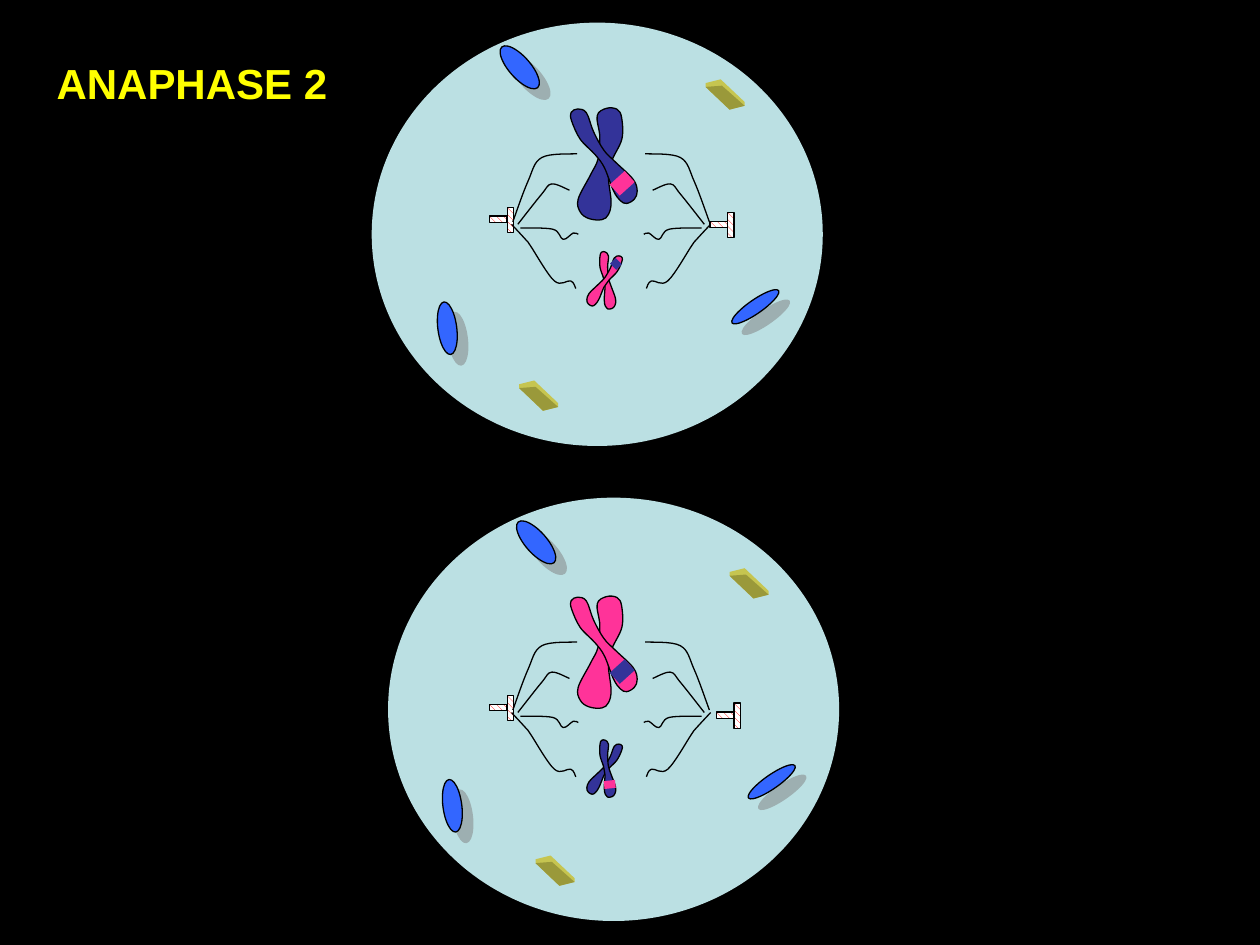
import dataclasses
import math

import lxml.etree
import pptx
import pptx.dml.color
import pptx.enum.dml
import pptx.enum.shapes
import pptx.oxml.ns
import pptx.util

RGB = pptx.dml.color.RGBColor
BLACK = RGB(0x00, 0x00, 0x00)
WHITE = RGB(0xFF, 0xFF, 0xFF)
RED = RGB(0xFF, 0x00, 0x00)
YELLOW = RGB(0xFF, 0xFF, 0x00)
CELL = RGB(0xBB, 0xE0, 0xE3)
BLUE = RGB(0x33, 0x66, 0xFF)
GREY = RGB(0x80, 0x80, 0x80)
NAVY = RGB(0x33, 0x33, 0x99)
PINK = RGB(0xFF, 0x33, 0x99)
LIGHT = RGB(0xC6, 0xC5, 0x50)
DARK = RGB(0x9A, 0x99, 0x3A)
KINDS = pptx.enum.shapes.MSO_SHAPE
COLS, ROWS = 1000, 750
AXIS = 485


@dataclasses.dataclass
class Arm:
    """One chromatid: middle, size, turn, and whether it is mirrored."""
    x: float
    y: float
    wide: float
    high: float
    turn: float
    flip: bool = False

    def place(self, across, down):
        """Turn shares of the arm's box into a spot on the grid."""
        dx = (across - 0.5) * self.wide * (-1 if self.flip else 1)
        dy = (down - 0.5) * self.high
        return swing(dx, dy, self.turn, self.x, self.y)


@dataclasses.dataclass
class Band:
    """A swapped piece: the arm, share down it, length, lean and weight."""
    arm: Arm
    down: float
    span: float
    lean: float
    weight: float


# fields: share down the arm, left edge, right edge
PROFILE = [(0.02, 0.55, 0.82), (0.09, 0.34, 0.95), (0.27, 0.45, 1.0),
           (0.46, 0.45, 0.80), (0.60, 0.30, 0.74), (0.82, 0.04, 0.86),
           (0.93, 0.12, 0.82), (0.98, 0.35, 0.67)]
BROAD = Arm(476, 130, 32, 92, 4.7)
SLIM = Arm(480, 123, 22, 88, 330.8, flip=True)
STEEP = Arm(482.5, 222.5, 11, 47, 356, flip=True)
SLOPE = Arm(479.5, 222.5, 11, 47, 29.9)
LONG = Band(SLIM, 0.8, 16, -13, 8.5)
HIGH = Band(SLOPE, 0.16, 7, 15, 4.5)
LOW = Band(STEEP, 0.77, 9, -2, 4.5)

POLE = (405, 178)
THREADS = {
    "top": [(2, -2), (14, -34), (25, -53), (53, -56)],
    "upper": [(6, 0), (25, -24), (33, -32), (47, -27)],
    "lower": [(8, 3), (34, 4), (42, 12), (50, 7), (54, 8)],
    "base": [(1, 0), (13, 13), (16, 17), (35, 45), (48, 45), (52, 51)],
}


def swing(dx, dy, turn, x=0, y=0):
    cos, sin = math.cos(math.radians(turn)), math.sin(math.radians(turn))
    return x + dx * cos - dy * sin, y + dx * sin + dy * cos


def smooth(spots, closed=False):
    """Give the Bezier points of a smooth curve through the spots."""
    count = len(spots)

    def spot(at):
        return spots[at % count if closed else min(max(at, 0), count - 1)]

    curve = [spots[0]]
    for at in range(count if closed else count - 1):
        before, start, end, after = (spot(at + step) for step in (-1, 0, 1, 2))
        curve.append(tuple(s + (e - b) / 6 for b, s, e in zip(before, start, end)))
        curve.append(tuple(e - (a - s) / 6 for s, e, a in zip(start, end, after)))
        curve.append(end)
    return curve


def write(frame, text, size=24, color=YELLOW, bold=True, font="Arial"):
    run = frame.paragraphs[0].add_run()
    run.text = text
    run.font.size, run.font.bold, run.font.name = pptx.util.Pt(size), bold, font
    run.font.color.rgb = color


class Board:
    """Draws cells on one slide over a grid of 1000 columns by 750 rows."""

    def __init__(self, deck):
        self.unit = deck.slide_width / COLS
        self.slide = deck.slides.add_slide(deck.slide_layouts[6])
        self.slide.background.fill.solid()
        self.slide.background.fill.fore_color.rgb = BLACK
        self.items = self.slide.shapes

    def size(self, *spans):
        return [round(span * self.unit) for span in spans]

    def paint(self, shape, fill, line):
        shape.shadow.inherit = False
        if fill is None:
            shape.fill.background()
        else:
            shape.fill.solid()
            shape.fill.fore_color.rgb = fill
        if line is None:
            shape.line.fill.background()
        else:
            shape.line.color.rgb = line
            shape.line.width = pptx.util.Pt(0.75)

    def form(self, kind, box, fill, line=BLACK, turn=0):
        shape = self.items.add_shape(kind, *self.size(*box))
        shape.rotation = turn
        self.paint(shape, fill, line)
        return shape

    def trace(self, spots, fill=None, line=BLACK):
        first, *rest = [self.size(*spot) for spot in spots]
        pen = self.items.build_freeform(*first)
        pen.add_line_segments(rest, close=fill is not None)
        shape = pen.convert_to_shape()
        self.paint(shape, fill, line)
        return shape

    def curve(self, spots, fill=None):
        shape = self.trace(smooth(spots, closed=fill is not None), fill)
        name = pptx.oxml.ns.qn
        steps = list(shape._element.iter(name("a:lnTo")))
        for at in range(0, len(steps), 3):
            bend = lxml.etree.SubElement(steps[at].getparent(), name("a:cubicBezTo"))
            steps[at].addprevious(bend)
            for step in steps[at:at + 3]:
                bend.append(step[0])
                step.getparent().remove(step)
        return shape

    def label(self, box, text, **form):
        frame = self.items.add_textbox(*self.size(*box)).text_frame
        frame.word_wrap = True
        write(frame, text, **form)

    def oval(self, box, turn):
        shape = self.form(KINDS.OVAL, box, BLUE, turn=turn)
        name = pptx.oxml.ns.qn
        effects = shape._element.spPr.find(name("a:effectLst"))
        cast = lxml.etree.SubElement(effects, name("a:outerShdw"), dist="107950",
                                     dir="2700000", algn="ctr", rotWithShape="0")
        tint = lxml.etree.SubElement(cast, name("a:srgbClr"), val=str(GREY))
        lxml.etree.SubElement(tint, name("a:alpha"), val="50000")

    def bar(self, x, y, thick=3):
        left, back, far, near = (x, y + 2), (x + 12, y - 1), (x + 31, y + 17), (x + 19, y + 20)
        sink = [(sx, sy + thick) for sx, sy in (left, back, far, near)]
        self.trace([left, back, far, sink[2], sink[3], sink[0]], LIGHT, line=None)
        self.trace([sink[0], (x + 13, y + 4), sink[2], sink[3]], DARK, line=None)

    def pole(self, x, y):
        for box in ((x, y, 5, 14), (x + 2, y + 5, 20, 5)):
            fill = self.form(KINDS.RECTANGLE, box, WHITE, turn=270).fill
            fill.patterned()
            fill.pattern = pptx.enum.dml.MSO_PATTERN.WIDE_DOWNWARD_DIAGONAL
            fill.fore_color.rgb, fill.back_color.rgb = RED, WHITE

    def spindle(self, drop):
        for thread in THREADS.values():
            left = [(POLE[0] + out, POLE[1] + down + drop) for out, down in thread]
            self.curve(left)
            self.curve([(2 * AXIS - x, y) for x, y in left])

    def arm(self, arm, fill):
        rim = [(right, down) for down, _, right in PROFILE]
        rim += [(left, down) for down, left, _ in reversed(PROFILE)]
        still = dataclasses.replace(arm, turn=0)
        self.curve([still.place(*spot) for spot in rim], fill).rotation = arm.turn

    def band(self, band, drop, color):
        row = min(PROFILE, key=lambda row: abs(row[0] - band.down))
        x, y = band.arm.place((row[1] + row[2]) / 2, band.down)
        dx, dy = swing(band.span / 2, 0, band.arm.turn + band.lean)
        ends = self.size(x - dx, y - dy + drop, x + dx, y + dy + drop)
        line = self.items.add_connector(pptx.enum.shapes.MSO_CONNECTOR.STRAIGHT, *ends)
        line.line.color.rgb, line.line.width = color, pptx.util.Pt(band.weight)
        lxml.etree.SubElement(line._element.spPr, pptx.oxml.ns.qn("a:effectLst"))

    def pair(self, arms, band, drop, fill, swap):
        for arm in arms:
            self.arm(dataclasses.replace(arm, y=arm.y + drop), fill)
        self.band(band, drop, swap)

    def cell(self, x, y, drop, main, small, arms, mark,
             oval=(0, 0), bar=(0, 0), pole=(0, 0)):
        """Draw one cell; oval, bar and pole shift the loose parts."""
        self.form(KINDS.OVAL, (x, y, 358, 336), CELL, line=None)
        self.oval((x + 282, y + 220, 45, 11), 325.2)
        self.oval((x + 96, y + 27, 43, 17), 48.6)
        self.oval((x + 39 + oval[0], y + 235 + oval[1], 42, 15), 82.7)
        self.bar(x + 117, y + 285)
        self.bar(x + 265 + bar[0], y + 46 + bar[1])
        self.pole(POLE[0] - 12, POLE[1] - 11 + drop)
        self.pole(POLE[0] + 163 + pole[0], POLE[1] - 7 + drop + pole[1])
        self.spindle(drop)
        self.pair((BROAD, SLIM), LONG, drop, main, small)
        self.pair(arms, mark, drop, small, main)


def main():
    deck = pptx.Presentation()
    deck.slide_width, deck.slide_height = pptx.util.Inches(10), pptx.util.Inches(7.5)
    board = Board(deck)
    board.cell(295, 18, 0, NAVY, PINK, (STEEP, SLOPE), HIGH)
    board.cell(308, 395, 387.5, PINK, NAVY, (SLOPE, STEEP), LOW,
               oval=(-9, 2), bar=(6, 11), pole=(5, 2))
    board.label((35, 41, 278, 50), "ANAPHASE 2")
    deck.save("out.pptx")


if __name__ == "__main__":
    main()
